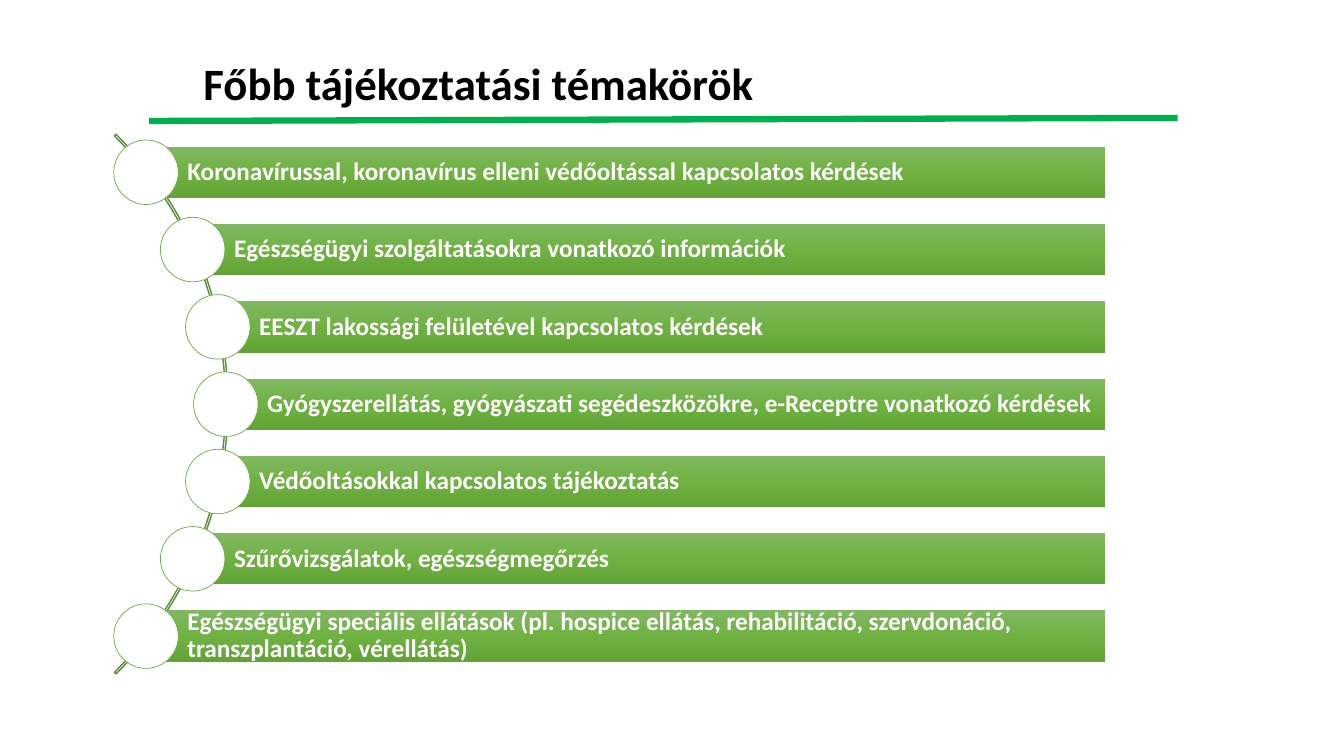
from dataclasses import dataclass
from math import sqrt

from lxml import etree
from pptx import Presentation
from pptx.dml.color import RGBColor
from pptx.enum.shapes import MSO_CONNECTOR, MSO_SHAPE
from pptx.enum.text import MSO_ANCHOR, PP_ALIGN
from pptx.oxml.ns import qn
from pptx.util import Inches, Pt

STRAIGHT = MSO_CONNECTOR.STRAIGHT
BLOCK_ARC, OVAL, RECTANGLE = MSO_SHAPE.BLOCK_ARC, MSO_SHAPE.OVAL, MSO_SHAPE.RECTANGLE
MIDDLE, LEFT = MSO_ANCHOR.MIDDLE, PP_ALIGN.LEFT


@dataclass(frozen=True)
class Theme:
    font: str = "Calibri"
    title_size: int = 32
    topic_size: int = 18
    title: str = "000000"
    white: str = "FFFFFF"
    rule: str = "00B050"
    arc: str = "5A8B39"
    ring: str = "70AD47"
    bar_stops: tuple = ((0, "81B861"), (50, "6FB242"), (100, "62A336"))


THEME = Theme()
TITLE = "Főbb tájékoztatási témakörök"
TOPICS = (
    "Koronavírussal, koronavírus elleni védőoltással kapcsolatos kérdések",
    "Egészségügyi szolgáltatásokra vonatkozó információk",
    "EESZT lakossági felületével kapcsolatos kérdések",
    "Gyógyszerellátás, gyógyászati segédeszközökre, e-Receptre vonatkozó kérdések",
    "Védőoltásokkal kapcsolatos tájékoztatás",
    "Szűrővizsgálatok, egészségmegőrzés",
    "Egészségügyi speciális ellátások (pl. hospice ellátás, rehabilitáció, "
    "szervdonáció, transzplantáció, vérellátás)",
)


def color(value):
    return RGBColor.from_string(value)


def style_text(paragraph, size, text_color):
    paragraph.font.name = THEME.font
    paragraph.font.size = Pt(size)
    paragraph.font.bold = True
    paragraph.font.color.rgb = color(text_color)


def fill_downward_gradient(shape, stops):
    """Give the shape a top-to-bottom gradient with any number of stops."""
    gradient = etree.Element(qn("a:gradFill"), rotWithShape="1")
    stop_list = etree.SubElement(gradient, qn("a:gsLst"))
    for percent, value in stops:
        stop = etree.SubElement(stop_list, qn("a:gs"), pos=str(percent * 1000))
        etree.SubElement(stop, qn("a:srgbClr"), val=value)
    etree.SubElement(gradient, qn("a:lin"), ang="5400000", scaled="0")
    shape._element.spPr.find(qn("a:prstGeom")).addnext(gradient)


def add_shape(slide, preset, left, top, width, height):
    shape = slide.shapes.add_shape(
        preset, Inches(left), Inches(top), Inches(width), Inches(height))
    shape.shadow.inherit = False
    return shape


def add_heading(slide, left, top, width, height):
    """Place the title and the green rule under it."""
    heading = slide.shapes.add_textbox(
        Inches(left + 0.44), Inches(top), Inches(width), Inches(height))
    heading.text_frame.word_wrap = True
    paragraph = heading.text_frame.paragraphs[0]
    paragraph.text = TITLE
    style_text(paragraph, THEME.title_size, THEME.title)

    rule = slide.shapes.add_connector(
        STRAIGHT, Inches(left), Inches(top + 0.7),
        Inches(left + 10.2), Inches(top + 0.67))
    rule.line.color.rgb = color(THEME.rule)
    rule.line.width = Pt(4.5)
    etree.SubElement(rule._element.spPr, qn("a:effectLst"))


def add_arc(slide, left, top, size):
    arc = add_shape(slide, BLOCK_ARC, left, top, size, size)
    for index, value in enumerate((189, 27, 0.003)):
        arc.adjustments[index] = value
    arc.fill.background()
    arc.line.color.rgb = color(THEME.arc)
    arc.line.width = Pt(1)


def add_topic(slide, text, left, middle, right):
    """Place a bar with its topic, and a circle centred on the bar's left end."""
    bar_height, circle_size = 0.51, 0.64
    bar = add_shape(
        slide, RECTANGLE, left, middle - bar_height / 2, right - left, bar_height)
    fill_downward_gradient(bar, THEME.bar_stops)
    bar.line.fill.background()
    frame = bar.text_frame
    frame.word_wrap = True
    frame.vertical_anchor = MIDDLE
    frame.margin_left = Inches(0.41)
    frame.margin_top = frame.margin_right = frame.margin_bottom = Inches(0.05)
    paragraph = frame.paragraphs[0]
    paragraph.text = text
    paragraph.alignment = LEFT
    paragraph.line_spacing = 0.9
    style_text(paragraph, THEME.topic_size, THEME.white)

    circle = add_shape(
        slide, OVAL, left - circle_size / 2, middle - circle_size / 2,
        circle_size, circle_size)
    circle.fill.solid()
    circle.fill.fore_color.rgb = color(THEME.white)
    circle.line.color.rgb = color(THEME.ring)
    circle.line.width = Pt(0.5)


def add_topic_list(slide, right, center_y):
    """Place the topics one below the other, their left ends along a curve."""
    arc_size, pitch = 7.57, 0.767
    curve_x, curve_radius = -1.5, 3.74
    add_arc(slide, -5.31, center_y - arc_size / 2, arc_size)
    for index, topic in enumerate(TOPICS):
        offset = (index - (len(TOPICS) - 1) / 2) * pitch
        left = curve_x + sqrt(curve_radius ** 2 - offset ** 2)
        add_topic(slide, topic, left, center_y + offset, right)


def main():
    presentation = Presentation()
    presentation.slide_width = Inches(13.33)
    presentation.slide_height = Inches(7.5)
    slide = presentation.slides.add_slide(presentation.slide_layouts[6])
    add_heading(slide, 1.48, 0.5, 11.4, 0.64)
    add_topic_list(slide, 10.96, 4.01)
    presentation.save("out.pptx")


if __name__ == "__main__":
    main()
